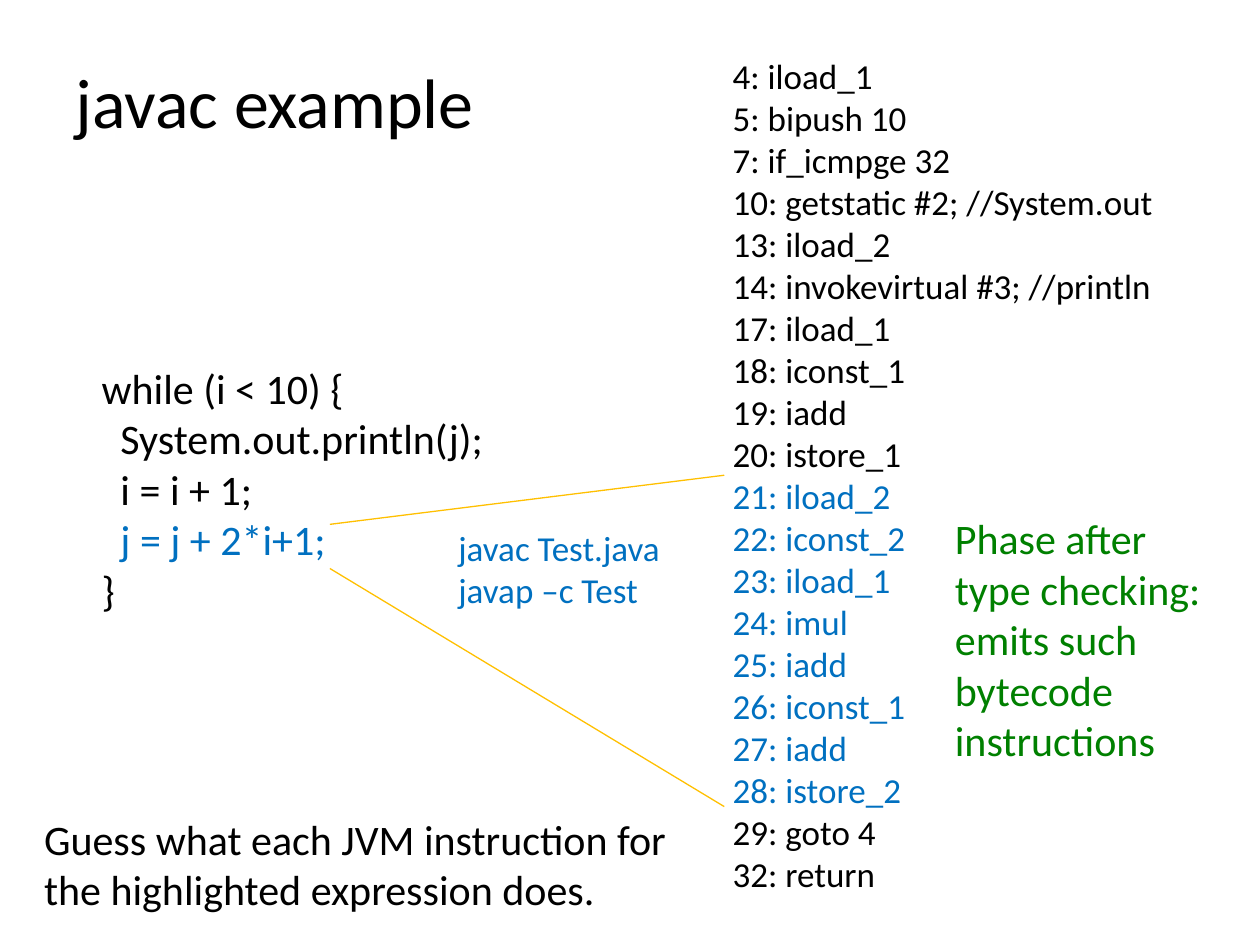
from lxml.etree import SubElement
from pptx import Presentation
from pptx.dml.color import RGBColor
from pptx.enum.shapes import MSO_CONNECTOR
from pptx.enum.text import MSO_ANCHOR, PP_ALIGN
from pptx.oxml.ns import qn
from pptx.util import Cm, Pt

BLACK = RGBColor(0x00, 0x00, 0x00)
BLUE = RGBColor(0x00, 0x70, 0xC0)
GREEN = RGBColor(0x00, 0x80, 0x00)
GOLD = RGBColor(0xFF, 0xC0, 0x00)
FONT = "Calibri"

TITLE = "javac example"
# Source lines: text, nesting level, colour
SOURCE = [
    ("while (i < 10) {", 0, BLACK),
    ("System.out.println(j);", 1, BLACK),
    ("i = i + 1;", 1, BLACK),
    ("j = j + 2*i+1;", 1, BLUE),
    ("}", 0, BLACK),
]
BYTECODE = [
    (4, "iload_1"), (5, "bipush 10"), (7, "if_icmpge 32"),
    (10, "getstatic #2; //System.out"), (13, "iload_2"),
    (14, "invokevirtual #3; //println"), (17, "iload_1"),
    (18, "iconst_1"), (19, "iadd"), (20, "istore_1"),
    (21, "iload_2"), (22, "iconst_2"), (23, "iload_1"), (24, "imul"),
    (25, "iadd"), (26, "iconst_1"), (27, "iadd"), (28, "istore_2"),
    (29, "goto 4"), (32, "return"),
]
HIGHLIGHTED = range(21, 29)
COMMANDS = ["javac Test.java", "javap –c Test"]
PHASE = ["Phase after\vtype checking:", "emits such bytecode instructions"]
TASK = ["Guess what each JVM instruction for the highlighted expression does."]

# Box: left, top, width, height in cm; text size; lines of (text, indent in cm, colour)
BOXES = [
    ((1.04, 7.16, 9.2, 5.38), 24,
     [(t, 0.76 + 0.38 * level, c) for t, level, c in SOURCE]),
    ((14.2, 0.89, 10.2, 17.35), 20,
     [(f"{n}: {op}", 0.32, BLUE if n in HIGHLIGHTED else BLACK)
      for n, op in BYTECODE]),
    ((8.99, 10.49, 4.62, 1.96), 20, [(t, 0, BLUE) for t in COMMANDS]),
    ((19, 10.19, 5.82, 5.38), 24, [(t, 0, GREEN) for t in PHASE]),
    ((0.64, 16.26, 13.36, 2.31), 24, [(t, 0, BLACK) for t in TASK]),
]
# From the highlighted statement to the ends of its bytecode: x1, y1, x2, y2
LINKS = [(6.65, 10.57, 14.6, 9.58), (6.65, 11.46, 14.6, 16.26)]


def format_paragraph(p, size, color):
    p.alignment = PP_ALIGN.LEFT
    p.font.name = FONT
    p.font.size = Pt(size)
    p.font.color.rgb = color


def add_lines(s, box, size, lines):
    tf = s.shapes.add_textbox(*map(Cm, box)).text_frame
    tf.word_wrap = True
    tf.vertical_anchor = MSO_ANCHOR.MIDDLE
    for i, (text, indent, color) in enumerate(lines):
        p = tf.add_paragraph() if i else tf.paragraphs[0]
        p.text = text
        format_paragraph(p, size, color)
        p._p.get_or_add_pPr().set("marL", str(Cm(indent)))


def add_link(s, ends):
    line = s.shapes.add_connector(MSO_CONNECTOR.STRAIGHT, *map(Cm, ends))
    line.line.color.rgb = GOLD
    line.line.width = Pt(0.75)
    SubElement(line._element.spPr, qn("a:effectLst"))


def main():
    prs = Presentation()
    prs.slide_width, prs.slide_height = Cm(25.4), Cm(19.05)
    s = prs.slides.add_slide(prs.slide_layouts[5])

    title = s.shapes.title
    title.left, title.top, title.width, title.height = map(
        Cm, (1.27, 0.43, 12.34, 3.18))
    title.text_frame.text = TITLE
    title.text_frame.vertical_anchor = MSO_ANCHOR.MIDDLE
    format_paragraph(title.text_frame.paragraphs[0], 40, BLACK)

    for box, size, lines in BOXES:
        add_lines(s, box, size, lines)
    for ends in LINKS:
        add_link(s, ends)
    prs.save("out.pptx")


if __name__ == "__main__":
    main()
